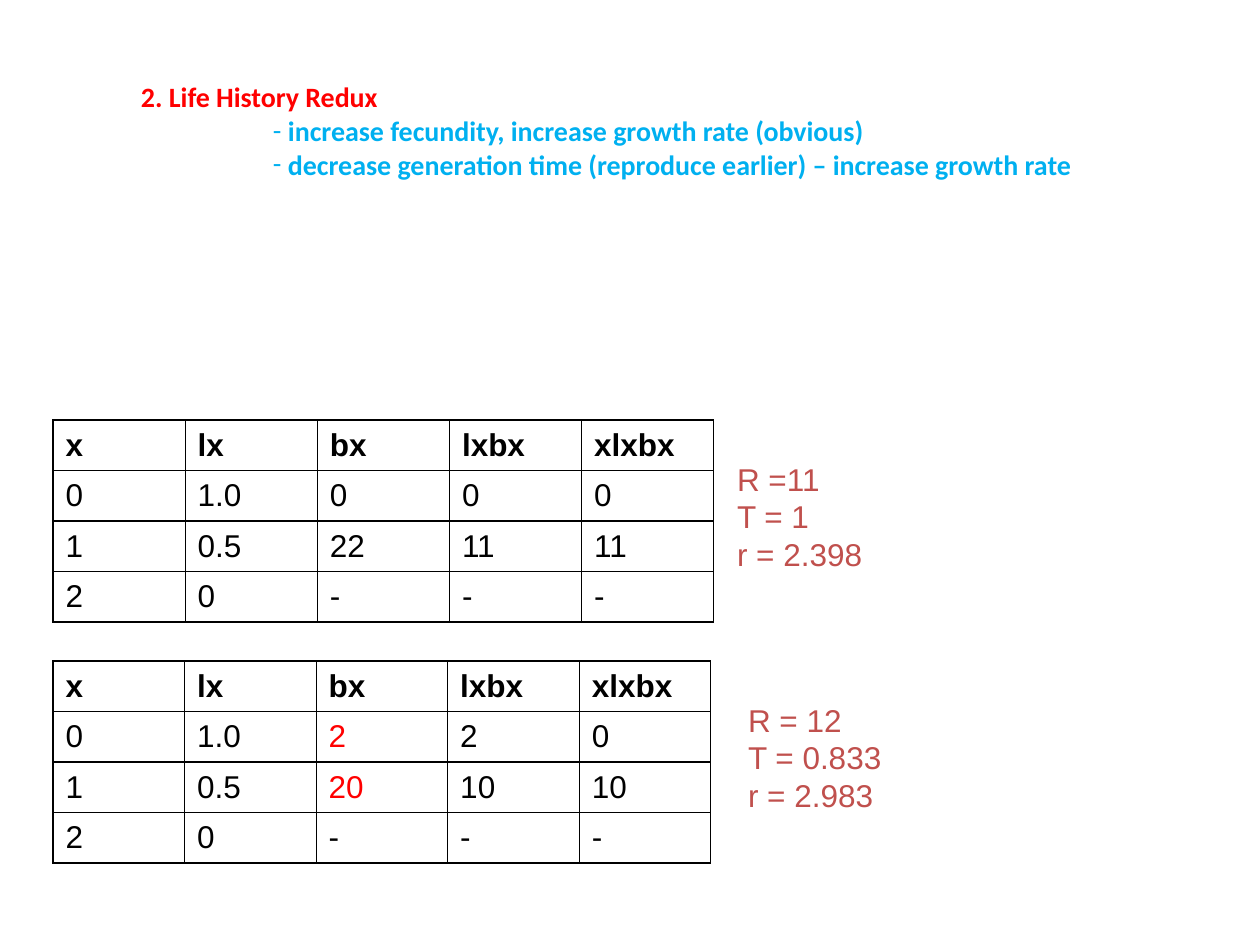
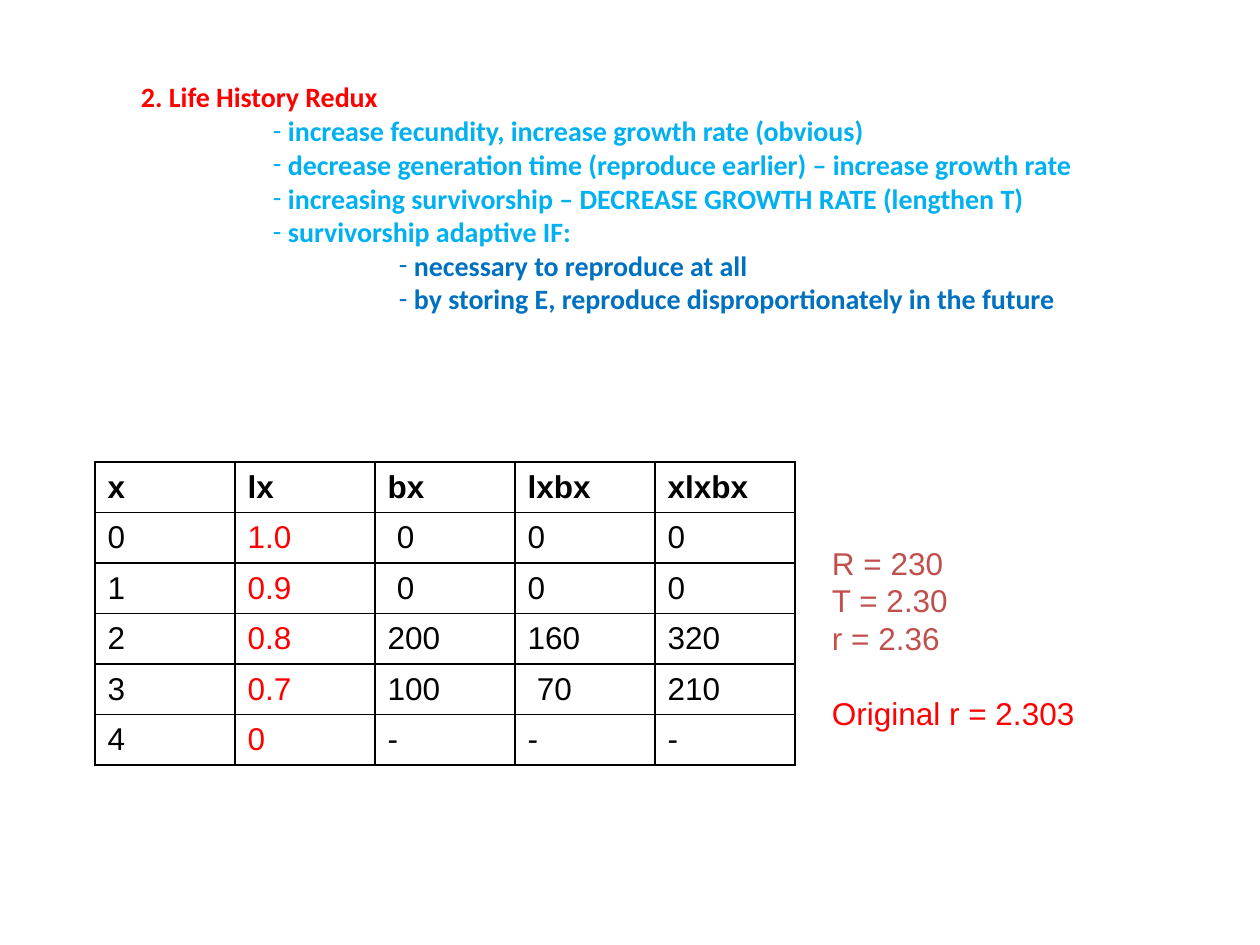
from lxml.etree import SubElement
from pptx import Presentation
from pptx.dml.color import RGBColor
from pptx.enum.text import MSO_ANCHOR as Anchor, MSO_AUTO_SIZE as AutoSize, PP_ALIGN as Align
from pptx.oxml.ns import qn
from pptx.util import Emu, Pt

PX = 914400 / 126
COLORS = {
    "black": "000000",
    "red": "FF0000",
    "sky": "00B0F0",
    "blue": "0070C0",
    "brick": "C0504D",
}
HEADERS = ["x", "lx", "bx", "lxbx", "xlxbx"]
ROW_HEIGHT = Emu(round(50.5 * PX))
DASH_WIDTH = 15
LEVEL_STEP = 126
POINTS = [
    ("increase fecundity, increase growth rate (obvious)", 0),
    ("decrease generation time (reproduce earlier) – increase growth rate", 0),
]
SURVIVORSHIP_POINTS = [
    ("increasing survivorship – DECREASE GROWTH RATE (lengthen T)", 0),
    ("survivorship adaptive IF:", 0),
    ("necessary to reproduce at all", 1),
    ("by storing E, reproduce disproportionately in the future", 1),
]


def px(n):
    return Emu(round(n * PX))


def place(shape, x, y, w, h):
    shape.left, shape.top, shape.width, shape.height = map(px, (x, y, w, h))
    tf = shape.text_frame
    tf.word_wrap = True
    tf.auto_size = AutoSize.NONE
    tf.vertical_anchor = Anchor.TOP
    tf.margin_left = tf.margin_right = tf.margin_top = tf.margin_bottom = 0
    return tf


def add_run(p, text, font, size, color, bold=False):
    r = p.add_run()
    r.text = text
    r.font.name = font
    r.font.size = Pt(size)
    r.font.bold = bold
    r.font.color.rgb = RGBColor.from_string(COLORS[color])


def next_paragraph(tf, i, spacing):
    p = tf.paragraphs[0] if i == 0 else tf.add_paragraph()
    p.alignment = Align.LEFT
    p.line_spacing = Pt(spacing)
    p.space_before = Pt(0)
    return p


def add_dash(p, level):
    pPr = p._p.get_or_add_pPr()
    pPr.set("marL", str(px(DASH_WIDTH + level * LEVEL_STEP)))
    pPr.set("indent", str(-px(DASH_WIDTH)))
    SubElement(pPr, qn("a:buFont"), typeface="Calibri")
    SubElement(pPr, qn("a:buChar"), char="-")


def add_outline(s, points):
    tf = place(s.shapes.title, 141, 80, 900, 34)
    add_run(next_paragraph(tf, 0, 19.2), "2. Life History Redux", "Calibri", 16, "red", True)
    tf = place(s.placeholders[1], 273, 114, 880, 34 * len(points))
    for i, (text, level) in enumerate(points):
        p = next_paragraph(tf, i, 19.2)
        p.level = level
        add_dash(p, level)
        add_run(p, text, "Calibri", 16, ("sky", "blue")[level], True)


def add_borders(cell):
    tcPr = cell._tc.get_or_add_tcPr()
    for side in ("lnL", "lnR", "lnT", "lnB"):
        ln = SubElement(tcPr, qn(f"a:{side}"), w=str(Pt(0.75)))
        fill = SubElement(ln, qn("a:solidFill"))
        SubElement(fill, qn("a:srgbClr"), val=COLORS["black"])


def add_life_table(s, x, y, width, rows, red=(), indented=()):
    rows = [HEADERS] + rows
    frame = s.shapes.add_table(len(rows), len(HEADERS), px(x), px(y),
                               px(width), ROW_HEIGHT * len(rows))
    table = frame.table
    table.first_row = table.horz_banding = False
    for i, values in enumerate(rows):
        table.rows[i].height = ROW_HEIGHT
        for j, value in enumerate(values):
            cell = table.cell(i, j)
            add_borders(cell)
            cell.fill.background()
            cell.vertical_anchor = Anchor.MIDDLE
            if (i, j) in indented:
                cell.margin_left = px(22)
            color = "red" if (i, j) in red else "black"
            add_run(cell.text_frame.paragraphs[0], value, "Arial", 18, color, i == 0)


def add_results(s, x, y, lines, reference=None):
    tb = s.shapes.add_textbox(0, 0, 0, 0)
    tf = place(tb, x, y, 400, 38 * (len(lines) + (2 if reference else 0)))
    for i, line in enumerate(lines):
        add_run(next_paragraph(tf, i, 21.5), line, "Arial", 18, "brick")
    if reference:
        p = next_paragraph(tf, len(lines), 21.5)
        p.space_before = Pt(21.5)
        add_run(p, reference, "Arial", 18, "red")


def new_slide(prs, points):
    s = prs.slides.add_slide(prs.slide_layouts[1])
    add_outline(s, points)
    return s


def main():
    prs = Presentation()
    prs.slide_width, prs.slide_height = px(1260), px(945)

    s = new_slide(prs, POINTS)
    last_row = ["2", "0", "-", "-", "-"]
    add_life_table(s, 53, 420, 661, [
        ["0", "1.0", "0", "0", "0"],
        ["1", "0.5", "22", "11", "11"],
        last_row,
    ])
    add_results(s, 737, 460, ["R =11", "T = 1", "r = 2.398"])
    add_life_table(s, 53, 661, 658, [
        ["0", "1.0", "2", "2", "0"],
        ["1", "0.5", "20", "10", "10"],
        last_row,
    ], red={(1, 2), (2, 2)})
    add_results(s, 748, 701, ["R = 12", "T = 0.833", "r = 2.983"])

    s = new_slide(prs, POINTS + SURVIVORSHIP_POINTS)
    add_life_table(s, 95, 462, 700, [
        ["0", "1.0", "0", "0", "0"],
        ["1", "0.9", "0", "0", "0"],
        ["2", "0.8", "200", "160", "320"],
        ["3", "0.7", "100", "70", "210"],
        ["4", "0", "-", "-", "-"],
    ], red={(i, 1) for i in range(1, 6)}, indented={(1, 2), (2, 2), (4, 3)})
    add_results(s, 832, 544, ["R = 230", "T = 2.30", "r = 2.36"], "Original r = 2.303")

    prs.save("out.pptx")


if __name__ == "__main__":
    main()
